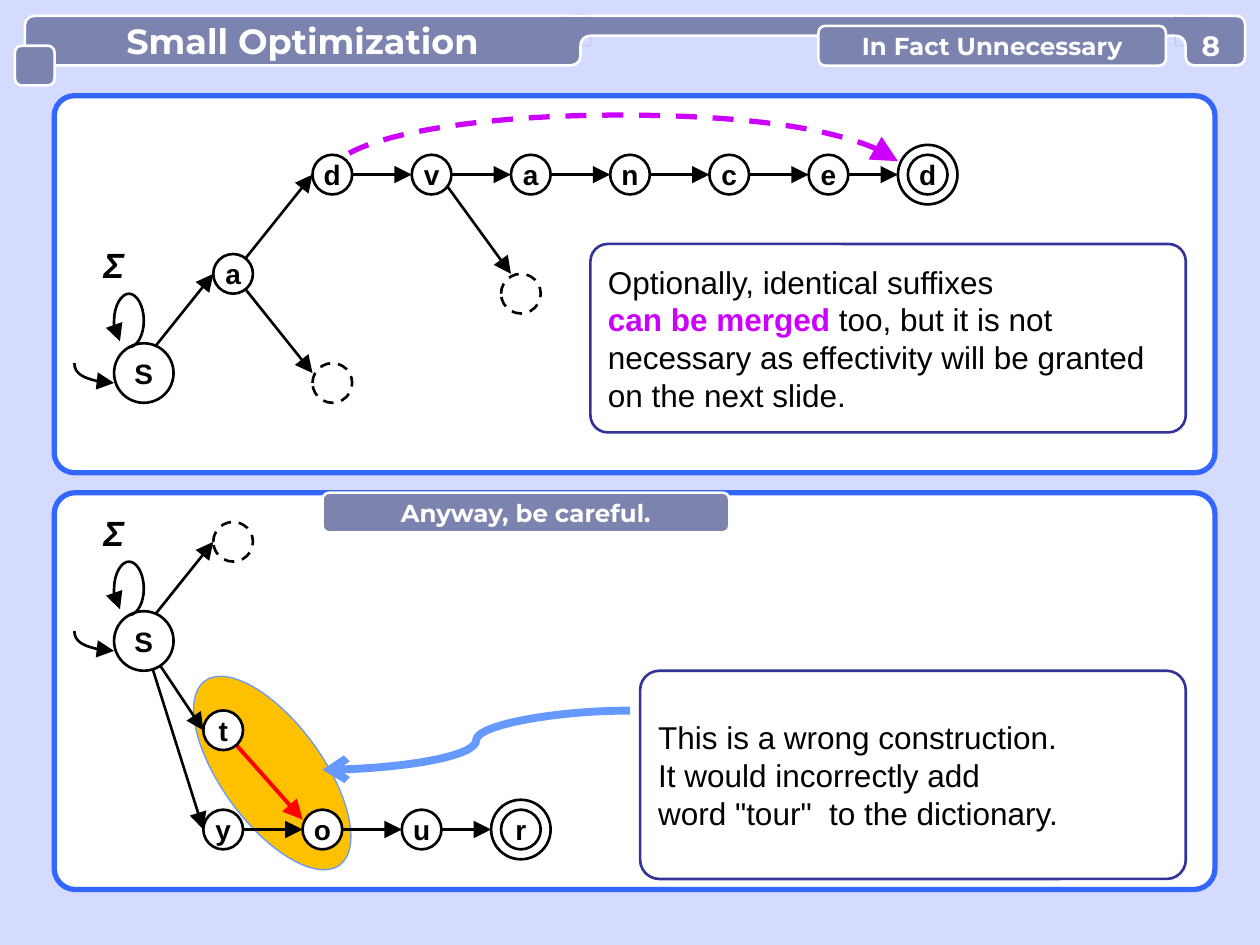
from copy import deepcopy
from lxml.etree import SubElement
from pptx import Presentation
from pptx.dml.color import RGBColor
from pptx.enum.dml import MSO_LINE
from pptx.enum.shapes import MSO_CONNECTOR, MSO_SHAPE
from pptx.enum.text import MSO_ANCHOR, PP_ALIGN
from pptx.oxml.ns import qn
from pptx.util import Pt

COLORS = {"background": "D5DAFF", "white": "FFFFFF", "black": "000000", "panel": "3366FF",
          "note": "333399", "header": "7D83AF", "suffix": "CC00FF", "wrong": "FF0000",
          "highlight": "FFC000", "pointer": "6699FF"}
CM = 28.35


def color(name):
    """Return the named colour."""
    return RGBColor.from_string(COLORS[name])


def outline(part, name, width, dashed=False, head=None, tail=None):
    """Format a line with its optional dashes and large arrowheads."""
    part.line.color.rgb = color(name)
    part.line.width = Pt(width)
    if dashed:
        part.line.dash_style = MSO_LINE.DASH
    ln = part._element.spPr.find(qn("a:ln"))
    for tag, kind in (("a:headEnd", head), ("a:tailEnd", tail)):
        if kind:
            size = "lg" if kind == "triangle" else "med"
            SubElement(ln, qn(tag), type=kind, w=size, len=size)


def block(slide, kind, box, fill=None, line=None, width=1.5, radius=None, dashed=False):
    """Add a preset shape in a left, top, width, height box."""
    part = slide.shapes.add_shape(kind, *(Pt(length) for length in box))
    part.shadow.inherit = False
    if radius is not None:
        part.adjustments[0] = radius
    if fill:
        part.fill.solid()
        part.fill.fore_color.rgb = color(fill)
    else:
        part.fill.background()
    if line:
        outline(part, line, width, dashed)
    else:
        part.line.fill.background()
    return part


def style(run, size, name, font, bold):
    """Format a run."""
    run.font.name, run.font.size, run.font.bold = font, Pt(size), bold
    run.font.color.rgb = color(name)


def write(part, text, size, name="black", font="Arial", bold=True, align=PP_ALIGN.CENTER):
    """Fill a shape with uniformly formatted, vertically centred text."""
    frame = part.text_frame
    frame.text = text
    frame.word_wrap = False
    frame.vertical_anchor = MSO_ANCHOR.MIDDLE
    for paragraph in frame.paragraphs:
        paragraph.alignment = align
        for run in paragraph.runs:
            style(run, size, name, font, bold)
    return frame


def no_margins(frame):
    """Remove the margins of a text frame."""
    frame.margin_left = frame.margin_right = frame.margin_top = frame.margin_bottom = 0


def connect(slide, start, end, name="black", width=1.5, tail=None, kind=MSO_CONNECTOR.STRAIGHT):
    """Draw a connector between two points."""
    link = slide.shapes.add_connector(kind, *(Pt(length) for length in (*start, *end)))
    outline(link, name, width, tail=tail)
    SubElement(link._element.spPr, qn("a:effectLst"))


def curve(slide, points):
    """Draw a chain of cubic curves given as a start and triples of points."""
    places = [(Pt(x), Pt(y)) for x, y in points]
    builder = slide.shapes.build_freeform(*places[0])
    builder.add_line_segments(places[1:], close=False)
    part = builder.convert_to_shape()
    part.shadow.inherit = False
    part.fill.background()
    outline_path = next(part._element.iter(qn("a:path")))
    segments = outline_path.findall(qn("a:lnTo"))
    for first in range(0, len(segments), 3):
        cubic = SubElement(outline_path, qn("a:cubicBezTo"))
        for segment in segments[first:first + 3]:
            cubic.append(segment[0])
            outline_path.remove(segment)
    return part


def arc(slide, origin, points, name="black", width=1.5, dashed=False):
    """Draw a curved arrow, in centimetres from the origin, pointing at its start."""
    x, y = origin
    stroke = curve(slide, [(x + dx * CM, y + dy * CM) for dx, dy in points])
    outline(stroke, name, width, dashed, head="triangle")


def node(slide, origin, dx, dy, letter="", size=0.8, dashed=False):
    """Draw a state centred at an offset in centimetres from the origin."""
    x, y = origin[0] + dx * CM, origin[1] + dy * CM
    side = size * CM
    state = block(slide, MSO_SHAPE.OVAL, (x - side / 2, y - side / 2, side, side),
                  None if dashed else "white", "black", dashed=dashed)
    if letter:
        write(state, letter, 16)


def edge(slide, origin, start, end, name="black", width=1.5):
    """Draw an arrow between two offsets in centimetres."""
    x, y = origin
    connect(slide, (x + start[0] * CM, y + start[1] * CM),
            (x + end[0] * CM, y + end[1] * CM), name, width, "triangle")


def word_chain(slide, origin, dx, dy, letters):
    """Draw a row of linked states whose last one is accepting."""
    last = len(letters) - 1
    node(slide, origin, dx + 2 * last, dy, size=1.2)
    for index, letter in enumerate(letters):
        x = dx + 2 * index
        node(slide, origin, x, dy, letter)
        if index < last:
            reach = 1.4 if index == last - 1 else 1.6
            edge(slide, origin, (x + 0.4, dy), (x + reach, dy))


def start_state(slide, origin):
    """Draw the initial state with its entry arrow, loop and alphabet label."""
    x, y = origin
    node(slide, origin, 0, 0, "S", 1.2)
    arc(slide, origin, [(-0.6, 0.2), (-1.04, 0.2), (-1.4, 0.02), (-1.4, -0.2)])
    arc(slide, origin, [(-0.48, -0.64), (-0.56, -0.74), (-0.6, -0.89), (-0.6, -1.05),
                        (-0.6, -1.36), (-0.45, -1.6), (-0.3, -1.6),
                        (-0.14, -1.6), (0, -1.36), (0, -1.05),
                        (0, -0.76), (-0.14, -0.52), (-0.3, -0.52)])
    alphabet = block(slide, MSO_SHAPE.RECTANGLE,
                     (x - CM, y - 2.58 * CM, 0.8 * CM, 0.8 * CM), "white")
    frame = write(alphabet, "Σ", 20)
    no_margins(frame)
    frame.paragraphs[0].runs[0].font.italic = True


def panel(slide, box):
    """Draw a white rounded panel."""
    block(slide, MSO_SHAPE.ROUNDED_RECTANGLE, box, "white", "panel", 3, 0.053)


def note(slide, box, text):
    """Draw a rounded note with left-aligned text."""
    remark = block(slide, MSO_SHAPE.ROUNDED_RECTANGLE, box, "white", "note", radius=0.092)
    return write(remark, text, 18, bold=False, align=PP_ALIGN.LEFT)


def label(slide, box, text="", size=14, radius=0.17):
    """Draw a header-coloured tab."""
    tab = block(slide, MSO_SHAPE.ROUNDED_RECTANGLE, box, "header", "white", radius=radius)
    if text:
        write(tab, text, size, "white", "Montserrat")


def suffix_panel(slide, box):
    """Draw the automaton whose identical suffixes may be merged."""
    left, top = box[:2]
    origin = (left + 51.2, top + 158.5)
    panel(slide, box)
    for start, end in (((-0.2, 0), (1.4, -2)), ((1.8, -2), (3.4, -4)),
                       ((1.8, -2), (3.4, 0)), ((5.8, -4.2), (7.4, -2))):
        edge(slide, origin, start, end)
    node(slide, origin, 1.8, -2, "a")
    start_state(slide, origin)
    for dx, dy in ((3.8, 0.2), (7.6, -1.6)):
        node(slide, origin, dx, dy, dashed=True)
    arc(slide, origin, [(15.2, -4.27), (14.6, -4.8), (12.24, -5.2), (9.55, -5.2),
                        (6.65, -5.2), (4.19, -4.77), (3.8, -4.15)], "suffix", 3, True)
    word_chain(slide, origin, 3.8, -4, "dvanced")
    frame = note(slide, (left + 306.4, top + 84.7, 340.2, 107.7),
                 "Optionally, identical suffixes\ncan be merged \n"
                 "necessary as effectivity will be granted\non the next slide.")
    merged = frame.paragraphs[1]
    merged.add_run().text = "too, but it is not"
    for run, name, bold in zip(merged.runs, ("suffix", "black"), (True, False)):
        style(run, 18, name, "Arial", bold)


def warning_panel(slide, box):
    """Draw the wrong construction with its warning."""
    left, top = box[:2]
    origin = (left + 51.2, top + 84.8)
    panel(slide, box)
    merge = block(slide, MSO_SHAPE.OVAL, (left + 95.8, top + 95.1, 57.6, 130.3),
                  "highlight", "pointer", 0.75)
    merge.rotation = 323.8
    for start, end in (((-0.2, 0), (1.4, -2)), ((0, 0), (1.2, 1.8)), ((0, 0), (1.2, 3.8))):
        edge(slide, origin, start, end)
    edge(slide, origin, (1.6, 1.8), (3.2, 3.6), "wrong", 2.25)
    start_state(slide, origin)
    node(slide, origin, 1.8, -2, dashed=True)
    node(slide, origin, 1.6, 1.8, "t")
    word_chain(slide, origin, 1.6, 3.8, "your")
    note(slide, (left + 334.8, top + 101.8, 311.8, 119),
         'This is a wrong construction.\nIt would incorrectly add\nword "tour"  to the dictionary.')
    connect(slide, (left + 329, top + 124.6), (left + 153.3, top + 158.4),
            "pointer", 4.5, "arrow", MSO_CONNECTOR.CURVE)
    label(slide, (left + 153.3, top, 232.5, 22.7), "Anyway, be careful.")


def fillet(slide, x, y, side):
    """Join a tab to the header bar; side is 1 right of the tab and -1 left of it."""
    far, near = x + 5.67 * side, x - 11.33 * side
    block(slide, MSO_SHAPE.RECTANGLE, (min(far, near), y, 17, 17), "header")
    connect(slide, (near, y), (far, y), "white")
    bend = curve(slide, [(far, y + 11.33), (x + 2.5 * side, y + 11.33), (x, y + 13.9), (x, y + 17)])
    outline(bend, "white", 1.5)
    bend.fill.solid()
    bend.fill.fore_color.rgb = color("background")
    rim = next(bend._element.iter(qn("a:path")))
    corner = deepcopy(rim)
    rim.set("fill", "none")
    corner.set("stroke", "0")
    corner_x = corner.get("w") if side > 0 else "0"
    SubElement(SubElement(corner, qn("a:lnTo")), qn("a:pt"), x=corner_x, y=corner.get("h"))
    SubElement(corner, qn("a:close"))
    rim.addnext(corner)


def header(slide, box):
    """Draw the title bar, its tabs and the page number."""
    left, top = box[:2]
    label(slide, (left + 5.7, top, 317.5, 28.3), "Small Optimization", 20, 0.188)
    label(slide, (left + 323.2, top, 351.4, 11.33), radius=0.5)
    fillet(slide, left + 323.2, top, 1)
    label(slide, (left, top + 17, 22.7, 22.7))
    label(slide, (left + 669, top, 34, 28.3))
    fillet(slide, left + 669, top, -1)
    label(slide, (left + 459.2, top + 5.7, 198.6, 22.7), "In Fact Unnecessary")
    page = slide.shapes.add_textbox(Pt(left + 669), Pt(top + 7), Pt(28.8), Pt(19.5))
    no_margins(write(page, "8", 16, "white", "Montserrat"))


def main():
    """Build the slide and save it."""
    deck = Presentation()
    deck.slide_width, deck.slide_height = Pt(720), Pt(540)
    slide = deck.slides.add_slide(deck.slide_layouts[6])
    slide.background.fill.solid()
    slide.background.fill.fore_color.rgb = color("background")
    suffix_panel(slide, (31, 54.7, 663.3, 215.4))
    warning_panel(slide, (31, 281.5, 663.3, 226.8))
    header(slide, (8.5, 9.1, 703, 39.7))
    deck.save("out.pptx")


if __name__ == "__main__":
    main()
